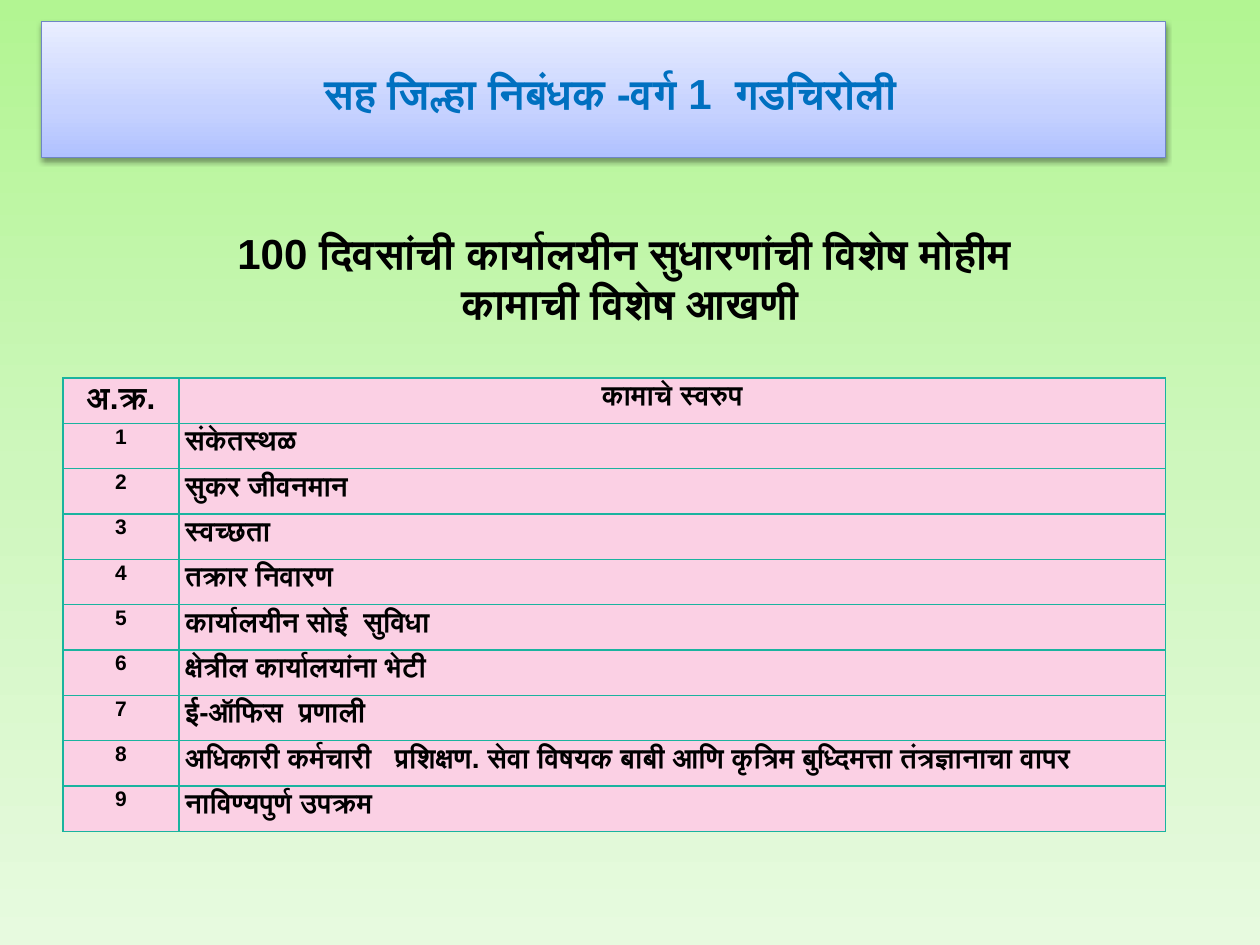
from lxml import etree
from pptx import Presentation
from pptx.dml.color import RGBColor
from pptx.enum.text import MSO_ANCHOR, MSO_AUTO_SIZE, PP_ALIGN
from pptx.oxml.ns import qn
from pptx.util import Inches, Pt

CENTER, LEFT = PP_ALIGN.CENTER, PP_ALIGN.LEFT
MIDDLE = MSO_ANCHOR.MIDDLE
NO_AUTOFIT, GROW = MSO_AUTO_SIZE.NONE, MSO_AUTO_SIZE.SHAPE_TO_FIT_TEXT

COLORS = {
    "title": "0070C0",
    "title_line": "6E86C6",
    "text": "000000",
    "cell": "FBD0E4",
    "border": "1AB39F",
}
BACKGROUND_STOPS = [(0, "B2F592"), (50, "CEF7BD"), (100, "E7FADF")]
TITLE_STOPS = [(0, "B0C1FF"), (35, "C6D2FF"), (100, "E9EEFF")]

HEADINGS = ("अ.क्र.", "कामाचे स्वरुप")
TASKS = [
    "संकेतस्थळ",
    "सुकर जीवनमान",
    "स्वच्छता",
    "तक्रार निवारण",
    "कार्यालयीन सोई  सुविधा",
    "क्षेत्रील कार्यालयांना भेटी",
    "ई-ऑफिस  प्रणाली",
    "अधिकारी कर्मचारी   प्रशिक्षण. सेवा विषयक बाबी आणि कृत्रिम बुध्दिमत्ता तंत्रज्ञानाचा वापर",
    "नाविण्यपुर्ण उपक्रम",
]


def add_xml(parent, tag, **attributes):
    element = etree.SubElement(parent, qn(tag))
    for name, value in attributes.items():
        element.set(name, str(value))
    return element


class SlideBuilder:
    font = "Arial"

    def __init__(self, slide):
        self.slide = slide

    def format_run(self, run, size, color="text"):
        run.font.size = Pt(size)
        run.font.bold = True
        run.font.name = self.font
        run.font.color.rgb = RGBColor.from_string(COLORS[color])
        add_xml(run.font._element, "a:cs", typeface=self.font)

    def gradient(self, fill, owner, stops, angle):
        fill.gradient()
        fill.gradient_angle = angle
        stop_list = next(owner.iter(qn("a:gsLst")))
        for stop in list(stop_list):
            stop_list.remove(stop)
        for position, color in stops:
            stop = add_xml(stop_list, "a:gs", pos=position * 1000)
            add_xml(stop, "a:srgbClr", val=color)

    def background(self, stops):
        self.gradient(self.slide.background.fill, self.slide.element, stops, 270)

    def title(self, text, left, top, width, height):
        shape = self.slide.shapes.title
        shape.left, shape.top = Inches(left), Inches(top)
        shape.width, shape.height = Inches(width), Inches(height)
        self.gradient(shape.fill, shape.element, TITLE_STOPS, 90)
        shape.line.color.rgb = RGBColor.from_string(COLORS["title_line"])
        shape.line.width = Pt(0.75)

        # Soft shadow below the banner
        shape.shadow.inherit = False
        effects = next(shape.element.iter(qn("a:effectLst")))
        shadow = add_xml(effects, "a:outerShdw", blurRad=Pt(3.1), dist=Pt(1.6),
                         dir=90 * 60000, rotWithShape=0)
        add_xml(add_xml(shadow, "a:srgbClr", val="000000"), "a:alpha", val=38000)

        frame = shape.text_frame
        frame.auto_size = NO_AUTOFIT
        frame.vertical_anchor = MIDDLE
        paragraph = frame.paragraphs[0]
        paragraph.alignment = CENTER
        for part, size in ((" ", 28), (text, 24)):
            run = paragraph.add_run()
            run.text = part
            self.format_run(run, size, "title")

    def text(self, text, left, top, width, height, size):
        box = self.slide.shapes.add_textbox(
            Inches(left), Inches(top), Inches(width), Inches(height))
        frame = box.text_frame
        frame.word_wrap = True
        frame.auto_size = GROW
        frame.vertical_anchor = MIDDLE
        frame.text = text
        for paragraph in frame.paragraphs:
            paragraph.alignment = CENTER
            self.format_run(paragraph.runs[0], size)

    def cell(self, cell, text, size, alignment):
        cell.margin_left = cell.margin_right = Inches(0.05)
        cell.margin_top = cell.margin_bottom = 0
        properties = cell._tc.get_or_add_tcPr()
        for side in ("a:lnL", "a:lnR", "a:lnT", "a:lnB"):
            line = add_xml(properties, side, w=Pt(1))
            add_xml(add_xml(line, "a:solidFill"), "a:srgbClr", val=COLORS["border"])
        cell.fill.solid()
        cell.fill.fore_color.rgb = RGBColor.from_string(COLORS["cell"])
        cell.text_frame.text = text
        paragraph = cell.text_frame.paragraphs[0]
        paragraph.alignment = alignment
        paragraph.line_spacing = 1.07
        self.format_run(paragraph.runs[0], size)

    def table(self, headings, tasks, left, top, column_widths, row_height):
        row_count = len(tasks) + 1
        table = self.slide.shapes.add_table(
            row_count, len(column_widths), Inches(left), Inches(top),
            Inches(sum(column_widths)), Inches(row_height * row_count)).table
        for column, width in zip(table.columns, column_widths):
            column.width = Inches(width)
        for row in table.rows:
            row.height = Inches(row_height)
        self.cell(table.cell(0, 0), headings[0], 18, CENTER)
        self.cell(table.cell(0, 1), headings[1], 16, CENTER)
        for number, task in enumerate(tasks, 1):
            self.cell(table.cell(number, 0), str(number), 12, CENTER)
            self.cell(table.cell(number, 1), task, 16, LEFT)


def main():
    presentation = Presentation()
    presentation.slide_width, presentation.slide_height = Inches(10), Inches(7.5)
    title_only = presentation.slide_layouts[5]
    builder = SlideBuilder(presentation.slides.add_slide(title_only))

    # Background and title banner
    builder.background(BACKGROUND_STOPS)
    builder.title("सह जिल्हा निबंधक -वर्ग 1  गडचिरोली", 0.33, 0.17, 8.92, 1.08)

    # Campaign heading
    builder.text("100 दिवसांची कार्यालयीन सुधारणांची विशेष मोहीम \nकामाची विशेष आखणी",
                 0, 1.75, 10, 0.91, 24)

    # Numbered list of tasks
    builder.table(HEADINGS, TASKS, 0.5, 3, (0.92, 7.83), 0.36)

    presentation.save("out.pptx")


if __name__ == "__main__":
    main()
